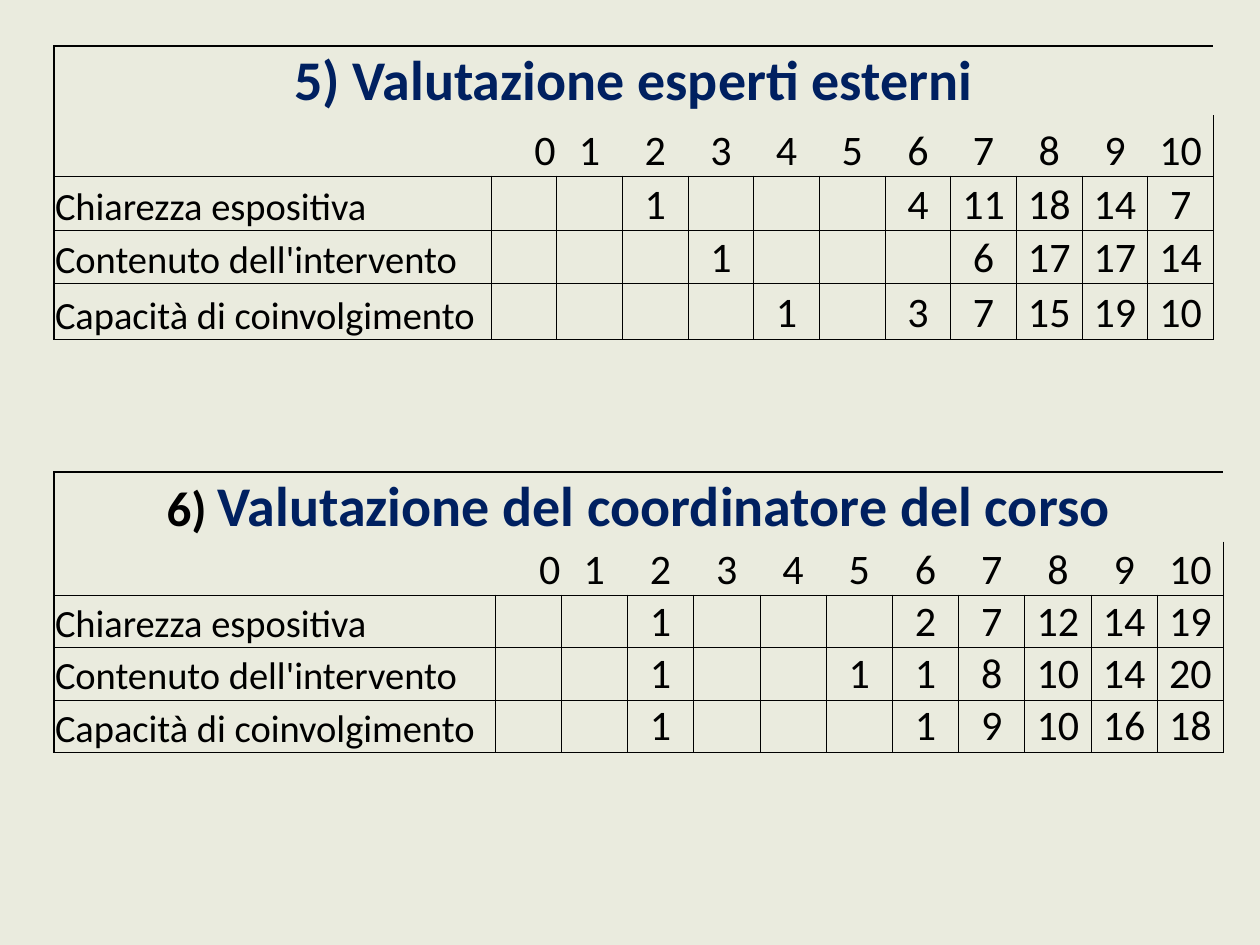
"""Build a slide with two tables of course evaluation scores."""
from lxml import etree
from pptx import Presentation
from pptx import util as u
from pptx.dml.color import RGBColor
from pptx.enum import text
from pptx.oxml import ns

PX = 914400 / 126
COLORS = {"bg": "EAEBDE", "ink": "000000", "title": "002060"}
NO_STYLE = "{2D5ABB26-0587-4C30-8999-92F81FD0307C}"
LEFT, CENTER, RIGHT = text.PP_ALIGN.LEFT, text.PP_ALIGN.CENTER, text.PP_ALIGN.RIGHT
SCORES = range(11)
LABELS = ["Chiarezza espositiva", "Contenuto dell'intervento", "Capacità di coinvolgimento"]

EXPERTS = [
    {2: 1, 6: 4, 7: 11, 8: 18, 9: 14, 10: 7},
    {3: 1, 7: 6, 8: 17, 9: 17, 10: 14},
    {4: 1, 6: 3, 7: 7, 8: 15, 9: 19, 10: 10},
]
COORDINATOR = [
    {2: 1, 6: 2, 7: 7, 8: 12, 9: 14, 10: 19},
    {2: 1, 5: 1, 6: 1, 7: 8, 8: 10, 9: 14, 10: 20},
    {2: 1, 6: 1, 7: 9, 8: 10, 9: 16, 10: 18},
]


def emu(px):
    return u.Emu(round(px * PX))


class Deck:
    """Holds the style and the current slide."""

    font = "Calibri"
    outer, inner = 1, 0.5

    def __init__(self, prs):
        self.s = prs.slides.add_slide(prs.slide_layouts[6])
        fill = self.s.background.fill
        fill.solid()
        fill.fore_color.rgb = RGBColor.from_string(COLORS["bg"])

    def label(self, cell, runs, align):
        p = cell.text_frame.paragraphs[0]
        p.alignment = align
        for words, size, color, bold in runs:
            r = p.add_run()
            r.text = words
            r.font.name, r.font.size, r.font.bold = self.font, u.Pt(size), bold
            r.font.color.rgb = RGBColor.from_string(COLORS[color])

    def border(self, cell, widths):
        tcPr = cell._tc.get_or_add_tcPr()
        for side in "LRTB":
            if side in widths:
                ln = etree.SubElement(tcPr, ns.qn(f"a:ln{side}"), w=str(u.Pt(widths[side])))
                fill = etree.SubElement(ln, ns.qn("a:solidFill"))
                etree.SubElement(fill, ns.qn("a:srgbClr"), val=COLORS["ink"])

    def edges(self, row, col, last_row, last_col):
        widths = {}
        if row >= 2:
            widths = dict.fromkeys("LRTB", self.inner)
        if col == 0:
            widths["L"] = self.outer
        if col == last_col:
            widths["R"] = self.outer
        if row in (0, 2):
            widths["T"] = self.outer
        if row in (1, last_row):
            widths["B"] = self.outer
        return widths

    def score_table(self, x, y, width, label_width, heights, title, counts):
        rows, cols = len(heights), len(SCORES) + 1
        frame = self.s.shapes.add_table(rows, cols, emu(x), emu(y), emu(width), emu(sum(heights)))
        table = frame.table
        table.first_row = table.horz_banding = False
        table._tbl.tblPr.find(ns.qn("a:tableStyleId")).text = NO_STYLE
        for row, height in zip(table.rows, heights):
            row.height = emu(height)
        for i, column in enumerate(table.columns):
            column.width = emu((width - label_width) / len(SCORES) if i else label_width)
        for i in range(rows):
            for j in range(cols):
                cell = table.cell(i, j)
                cell.margin_left = cell.margin_right = cell.margin_top = emu(1)
                cell.margin_bottom = 0
                cell.vertical_anchor = text.MSO_ANCHOR.BOTTOM
                self.border(cell, self.edges(i, j, rows - 1, cols - 1))
                cell.fill.background()
        table.cell(0, 0).merge(table.cell(0, cols - 1))
        self.label(table.cell(0, 0), title, CENTER)
        for score in SCORES:
            align = CENTER if score else RIGHT
            self.label(table.cell(1, score + 1), [(str(score), 24, "ink", False)], align)
        for i, (name, votes) in enumerate(zip(LABELS, counts), start=2):
            self.label(table.cell(i, 0), [(name, 22, "ink", False)], LEFT)
            for score, count in votes.items():
                self.label(table.cell(i, score + 1), [(str(count), 24, "ink", False)], CENTER)


def main():
    prs = Presentation()
    prs.slide_width, prs.slide_height = emu(1260), emu(945)
    deck = Deck(prs)
    deck.score_table(54, 46, 1160, 437, [68, 61, 54, 53, 56],
                     [("5) Valutazione esperti esterni", 32, "title", True)], EXPERTS)
    deck.score_table(54, 472, 1170, 441, [68, 54, 52, 52, 52],
                     [("6) ", 28, "ink", True),
                      ("Valutazione del coordinatore del corso", 32, "title", True)],
                     COORDINATOR)
    prs.save("out.pptx")


if __name__ == "__main__":
    main()
